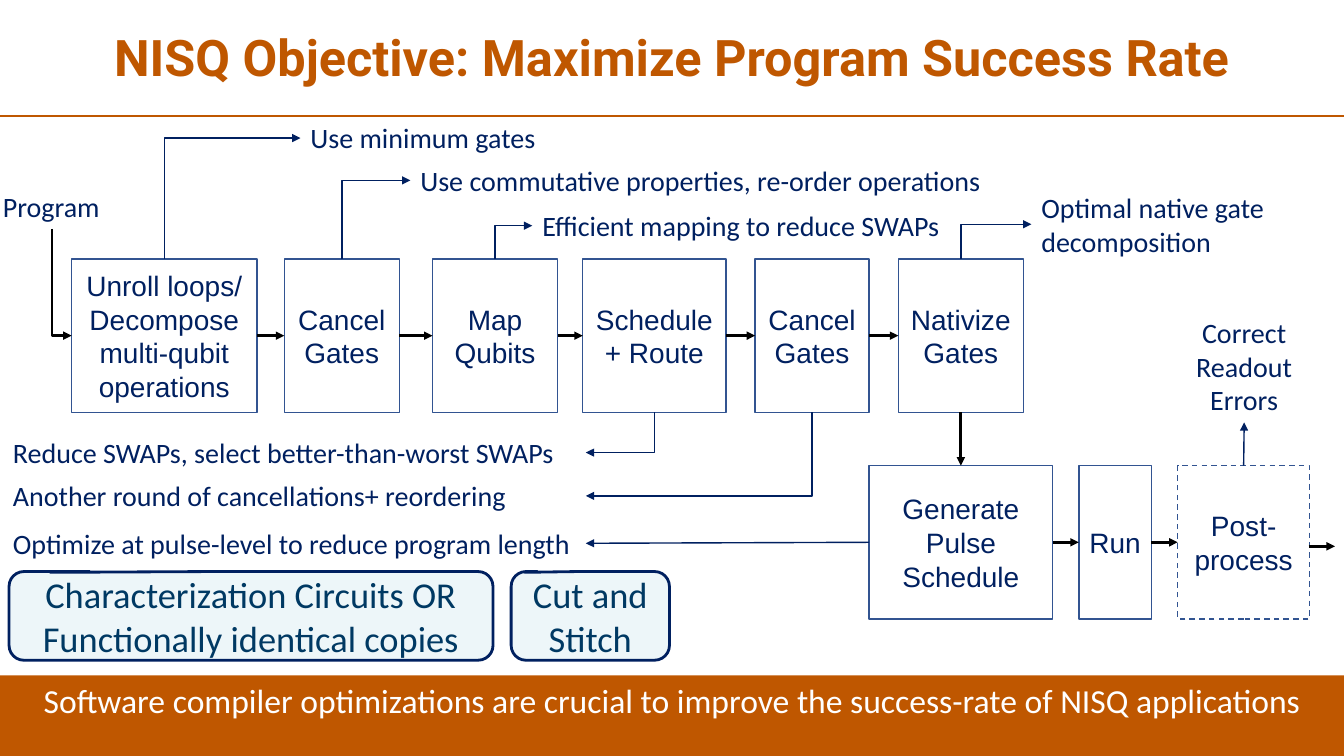
from dataclasses import dataclass
from itertools import pairwise

from lxml.etree import SubElement
from pptx import Presentation
from pptx.dml.color import RGBColor as Color
from pptx.enum.dml import MSO_LINE
from pptx.enum.shapes import MSO_CONNECTOR as Link, MSO_SHAPE as Shape
from pptx.enum.text import MSO_ANCHOR as Anchor, PP_ALIGN as Align
from pptx.oxml.ns import qn
from pptx.util import Inches, Pt

TOP, LEFT, BOTTOM, RIGHT = range(4)


@dataclass(frozen=True)
class Theme:
    orange: Color = Color.from_string("BF5700")
    navy: Color = Color.from_string("002060")
    outline: Color = Color.from_string("325491")
    teal: Color = Color.from_string("003963")
    pale: Color = Color.from_string("EDF6F9")
    white: Color = Color.from_string("FFFFFF")
    black: Color = Color.from_string("000000")
    title_font: str = "Roboto"
    step_font: str = "Arial"
    body_font: str = "Calibri"
    title_size: int = 36
    footer_size: int = 24
    callout_size: int = 26
    body_size: int = 20


class Flowchart:
    def __init__(self, slide, theme):
        self.shapes = slide.shapes
        self.theme = theme

    def set_text(self, box, text, *, font=None, size=None, color=None, bold=False,
                 align=Align.LEFT, anchor=Anchor.TOP, spacing=None):
        frame = box.text_frame
        frame.word_wrap = True
        frame.vertical_anchor = anchor
        for index, line in enumerate(text.split("\n")):
            para = frame.add_paragraph() if index else frame.paragraphs[0]
            para.alignment = align
            para.line_spacing = spacing
            span = para.add_run()
            span.text = line
            span.font.name = font or self.theme.body_font
            span.font.size = Pt(size or self.theme.body_size)
            span.font.bold = bold
            span.font.color.rgb = color or self.theme.navy
        return box

    def label(self, text, left, top, width, height=0.44, **style):
        box = self.shapes.add_textbox(*map(Inches, (left, top, width, height)))
        return self.set_text(box, text, **style)

    def block(self, kind, left, top, width, height, fill, line=None, weight=1):
        box = self.shapes.add_shape(kind, *map(Inches, (left, top, width, height)))
        box.shadow.inherit = False
        box.fill.solid()
        box.fill.fore_color.rgb = fill
        if line is None:
            box.line.fill.background()
        else:
            box.line.color.rgb = line
            box.line.width = Pt(weight)
        return box

    def step(self, text, left, top, width, dashed=False):
        box = self.block(Shape.RECTANGLE, left, top, width, 1.52,
                         self.theme.white, self.theme.outline)
        if dashed:
            box.line.dash_style = MSO_LINE.DASH
        return self.set_text(box, text, font=self.theme.step_font,
                             align=Align.CENTER, anchor=Anchor.MIDDLE)

    def callout(self, text, left, width):
        box = self.block(Shape.ROUNDED_RECTANGULAR_CALLOUT, left, 5.67, width, 0.88,
                         self.theme.pale, self.theme.navy, 2)
        for index, value in enumerate((-0.415, -0.491, 0.167)):
            box.adjustments[index] = value
        return self.set_text(box, text, size=self.theme.callout_size, color=self.theme.teal,
                             align=Align.CENTER, anchor=Anchor.MIDDLE)

    def line(self, begin, end, color, weight, arrow=True, kind=Link.STRAIGHT):
        link = self.shapes.add_connector(kind, *begin, *end)
        link.line.color.rgb = color
        link.line.width = Pt(weight)
        properties = link._element.spPr
        if arrow:
            SubElement(properties.find(qn("a:ln")), qn("a:tailEnd"), type="triangle")
        SubElement(properties, qn("a:effectLst"))
        return link

    def join(self, source, source_side, target, target_side, color, weight):
        link = self.line((0, 0), (0, 0), color, weight)
        link.begin_connect(source, source_side)
        link.end_connect(target, target_side)

    def elbow(self, begin, end, color, weight):
        """Arrow that runs vertically first, then horizontally.

        The one-bend preset runs across first, so it is laid out in a box
        with swapped sides and turned a quarter clockwise about its centre.
        """
        (x1, y1), (x2, y2) = begin, end
        middle_x, middle_y = (x1 + x2) // 2, (y1 + y2) // 2
        half_x, half_y = (x2 - x1) // 2, (y2 - y1) // 2
        link = self.line((middle_x - half_y, middle_y + half_x),
                         (middle_x + half_y, middle_y - half_x),
                         color, weight, kind=Link.ELBOW)
        properties = link._element.spPr
        properties.find(qn("a:xfrm")).set("rot", "5400000")
        properties.find(qn("a:prstGeom")).set("prst", "bentConnector2")

    def annotate(self, step, note):
        """Bent arrow from a step to the near side of a note above or below it."""
        above = note.top < step.top
        begin = (step.left + step.width // 2, step.top + (0 if above else step.height))
        end = (note.left + (0 if above else note.width), note.top + note.height // 2)
        self.elbow(begin, end, self.theme.navy, 1)


def main():
    deck = Presentation()
    deck.slide_width, deck.slide_height = Inches(13.33), Inches(7.5)
    theme = Theme()
    chart = Flowchart(deck.slides.add_slide(deck.slide_layouts[6]), theme)

    chart.label("NISQ Objective: Maximize Program Success Rate", 0.09, 0.04, 13.15, 1.11,
                font=theme.title_font, size=theme.title_size, color=theme.orange,
                bold=True, align=Align.CENTER, anchor=Anchor.MIDDLE, spacing=0.9)
    chart.line((0, Inches(1.15)), (deck.slide_width, Inches(1.15)),
               theme.orange, 1.5, arrow=False)
    footer = chart.block(Shape.RECTANGLE, 0, 6.7, 13.33, 0.8, theme.orange)
    chart.set_text(footer, "Software compiler optimizations are crucial to improve "
                   "the success-rate of NISQ applications",
                   size=theme.footer_size, color=theme.white, align=Align.CENTER)

    compile_steps = [chart.step(text, left, 2.57, width) for text, left, width in (
        ("Unroll loops/ Decompose multi-qubit operations", 0.71, 1.84),
        ("Cancel\nGates", 2.82, 1.14),
        ("Map\nQubits", 4.29, 1.24),
        ("Schedule + Route", 5.78, 1.42),
        ("Cancel\nGates", 7.49, 1.13),
        ("Nativize\nGates", 8.91, 1.24),
    )]
    pulse = chart.step("Generate Pulse Schedule", 8.62, 4.62, 1.82)
    run = chart.step("Run", 10.7, 4.62, 0.72)
    post = chart.step("Post-process", 11.68, 4.62, 1.31, dashed=True)
    for row in (compile_steps, [pulse, run, post]):
        for source, target in pairwise(row):
            chart.join(source, RIGHT, target, LEFT, theme.black, 2)
    unroll, nativize = compile_steps[0], compile_steps[-1]
    chart.join(nativize, BOTTOM, pulse, TOP, theme.black, 2)
    chart.line((Inches(12.98), Inches(5.42)), (Inches(13.24), Inches(5.42)),
               theme.black, 2)

    program = chart.label("Program", -0.07, 1.83, 1.17)
    chart.elbow((program.left + program.width // 2, program.top + program.height),
                (unroll.left, unroll.top + unroll.height // 2), theme.black, 2)

    notes = (
        ("Use minimum gates", 2.98, 1.15, 2.46, 0.44),
        ("Use commutative properties, re-order operations", 4.07, 1.57, 5.82, 0.44),
        ("Efficient mapping to reduce SWAPs", 5.28, 2.02, 4.18, 0.44),
        ("Reduce SWAPs, select better-than-worst SWAPs", 0.03, 4.27, 5.78, 0.44),
        ("Another round of cancellations+ reordering", 0.03, 4.7, 5.78, 0.44),
        ("Optimal native gate decomposition", 10.23, 1.84, 2.9, 0.77),
    )
    for step, note in zip(compile_steps, notes):
        chart.annotate(step, chart.label(*note))

    pulse_note = chart.label("Optimize at pulse-level to reduce program length",
                             0.03, 5.17, 5.78)
    chart.join(pulse, LEFT, pulse_note, RIGHT, theme.navy, 1)
    readout_note = chart.label("Correct Readout Errors", 11.66, 3.08, 1.36, 1.11,
                               align=Align.CENTER)
    chart.join(post, TOP, readout_note, BOTTOM, theme.navy, 1)

    chart.callout("Characterization Circuits OR Functionally identical copies", 0.09, 4.8)
    chart.callout("Cut and Stitch", 5.07, 1.57)
    deck.save("out.pptx")


if __name__ == "__main__":
    main()
